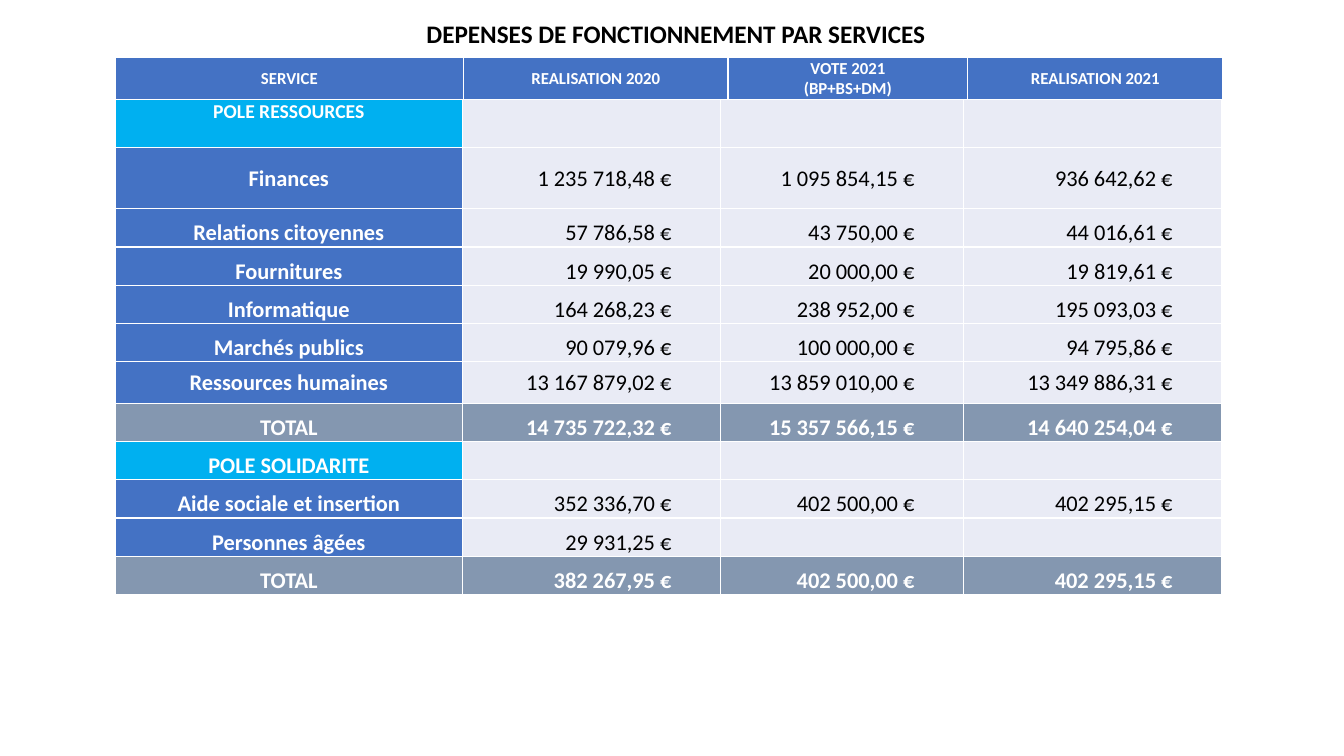
import pptx
import pptx.util
import pptx.dml.color
import pptx.enum.text
import pptx.oxml
import pptx.oxml.ns

# Content
TITLE = "DEPENSES DE FONCTIONNEMENT PAR SERVICES"
HEADINGS = ["SERVICE", "REALISATION 2020", "VOTE 2021\n(BP+BS+DM)", "REALISATION 2021"]
# (kind of row, texts)
SERVICES = [
    ("pole", ["POLE RESSOURCES", "", "", ""]),
    ("service", ["Finances", "1 235 718,48 €", "1 095 854,15 €", "936 642,62 €"]),
    ("service", ["Relations citoyennes", "57 786,58 €", "43 750,00 €", "44 016,61 €"]),
    ("service", ["Fournitures", "19 990,05 €", "20 000,00 €", "19 819,61 €"]),
    ("service", ["Informatique", "164 268,23 €", "238 952,00 €", "195 093,03 €"]),
    ("service", ["Marchés publics", "90 079,96 €", "100 000,00 €", "94 795,86 €"]),
    ("service", ["Ressources humaines", "13 167 879,02 €", "13 859 010,00 €", "13 349 886,31 €"]),
    ("total", ["TOTAL", "14 735 722,32 €", "15 357 566,15 €", "14 640 254,04 €"]),
    ("pole", ["POLE SOLIDARITE", "", "", ""]),
    ("service", ["Aide sociale et insertion", "352 336,70 €", "402 500,00 €", "402 295,15 €"]),
    ("service", ["Personnes âgées", "29 931,25 €", "", ""]),
    ("total", ["TOTAL", "382 267,95 €", "402 500,00 €", "402 295,15 €"]),
]

COLORS = {"white": "FFFFFF", "black": "000000", "service": "4472C4",
          "pole": "00B0F0", "total": "8497B0", "amount": "E9EBF5"}
FONT = "Calibri"
ANCHOR = pptx.enum.text.MSO_ANCHOR
ALIGN = pptx.enum.text.PP_ALIGN

# Grid, in inches
LEFT, TOP = 1.14, 0.57
HEADING_COLUMNS = [3.46, 2.62, 2.38, 2.53]
SERVICE_COLUMNS = [3.45, 2.56, 2.41, 2.56]
HEADING_HEIGHT, ROW_HEIGHT = 0.41, 0.38
SPECIAL_HEIGHTS = {0: 0.48, 1: 0.61, 6: 0.41}
SPECIAL_ANCHORS = {0: ANCHOR.TOP, 1: ANCHOR.MIDDLE, 6: ANCHOR.MIDDLE}
AMOUNT_MARGIN = 0.49


def inches(value):
    return pptx.util.Inches(value)


def rgb(name):
    return pptx.dml.color.RGBColor.from_string(COLORS[name])


def write(text_frame, text, size, color, bold, align):
    paragraph = text_frame.paragraphs[0]
    paragraph.alignment = align
    for index, line in enumerate(text.split("\n")):
        if index:
            paragraph.add_line_break()
        run = paragraph.add_run()
        run.text = line
        run.font.name = FONT
        run.font.size = pptx.util.Pt(size)
        run.font.bold = bold
        run.font.color.rgb = rgb(color)


def add_grid(slide, top, columns, rows):
    frame = slide.shapes.add_table(len(rows), len(columns), inches(LEFT), inches(top),
                                   inches(sum(columns)), inches(sum(rows)))
    table = frame.table
    table.first_row = False
    table.horz_banding = False
    for column, width in zip(table.columns, columns):
        column.width = inches(width)
    for row, height in zip(table.rows, rows):
        row.height = inches(height)
    return table


def format_cell(cell, fill, anchor, right_margin=0.01):
    cell.margin_left = cell.margin_top = inches(0.01)
    cell.margin_right = inches(right_margin)
    cell.margin_bottom = 0
    cell.vertical_anchor = anchor
    # White borders come before the fill in the cell properties
    properties = cell._tc.get_or_add_tcPr()
    for side in ("lnL", "lnR", "lnT", "lnB"):
        properties.append(pptx.oxml.parse_xml(
            f'<a:{side} {pptx.oxml.ns.nsdecls("a")} w="12700"><a:solidFill>'
            f'<a:srgbClr val="{COLORS["white"]}"/></a:solidFill></a:{side}>'))
    cell.fill.solid()
    cell.fill.fore_color.rgb = rgb(fill)


def main():
    presentation = pptx.Presentation()
    presentation.slide_width = inches(13.33)
    presentation.slide_height = inches(7.5)
    slide = presentation.slides.add_slide(presentation.slide_layouts[5])

    # Title
    title = slide.shapes.title
    title.left, title.top, title.width, title.height = map(inches, (1.21, 0.13, 10.99, 0.4))
    title.text_frame.vertical_anchor = ANCHOR.TOP
    write(title.text_frame, TITLE, 18, "black", True, ALIGN.CENTER)

    # Spending by service
    heights = [SPECIAL_HEIGHTS.get(row, ROW_HEIGHT) for row in range(len(SERVICES))]
    table = add_grid(slide, TOP + HEADING_HEIGHT, SERVICE_COLUMNS, heights)
    for row, (kind, texts) in enumerate(SERVICES):
        anchor = SPECIAL_ANCHORS.get(row, ANCHOR.BOTTOM)
        for column, text in enumerate(texts):
            cell = table.cell(row, column)
            is_amount = column > 0
            plain = is_amount and kind != "total"
            format_cell(cell, "amount" if plain else kind, anchor,
                        AMOUNT_MARGIN if is_amount else 0.01)
            if text:
                write(cell.text_frame, text, 14 if row == 0 else 16,
                      "black" if plain else "white", not plain,
                      ALIGN.RIGHT if is_amount else ALIGN.CENTER)

    # Column headings
    header = add_grid(slide, TOP, HEADING_COLUMNS, [HEADING_HEIGHT])
    for column, heading in enumerate(HEADINGS):
        cell = header.cell(0, column)
        format_cell(cell, "service", ANCHOR.MIDDLE)
        write(cell.text_frame, heading, 12, "white", True, ALIGN.CENTER)

    presentation.save("out.pptx")


if __name__ == "__main__":
    main()
